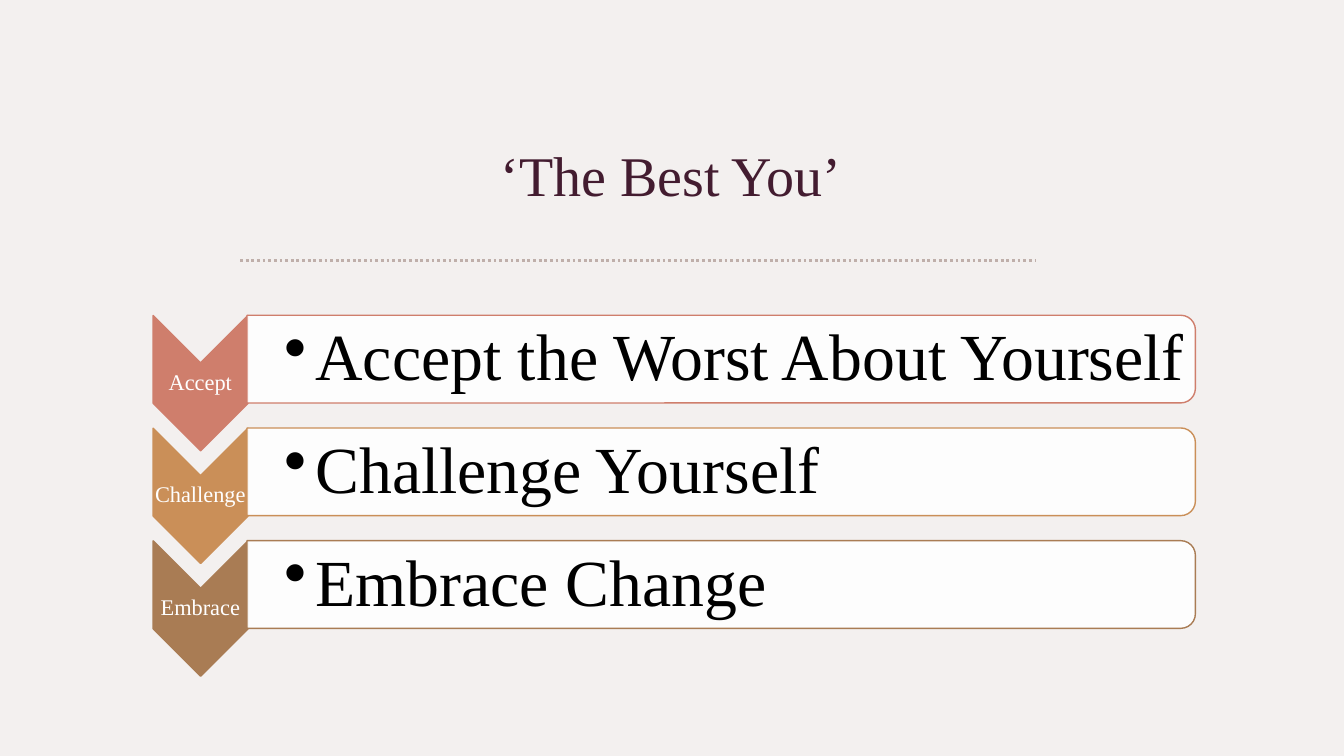
from pptx import Presentation
from pptx.dml.color import RGBColor
from pptx.enum.dml import MSO_LINE
from pptx.enum.shapes import MSO_CONNECTOR, MSO_SHAPE
from pptx.enum.text import MSO_ANCHOR, PP_ALIGN
from pptx.oxml.ns import qn
from pptx.util import Cm, Pt
from lxml.etree import SubElement


def color(hex_string):
    return RGBColor.from_string(hex_string)


def add_text(text, left, top, width, height, size, hex_color,
             align=PP_ALIGN.CENTER, spacing=0.9, inset=0.03, left_inset=0.03, bullet=False):
    box = slide.shapes.add_textbox(Cm(left), Cm(top), Cm(width), Cm(height))
    frame = box.text_frame
    frame.word_wrap = True
    frame.vertical_anchor = MSO_ANCHOR.MIDDLE
    frame.margin_left = Cm(left_inset)
    frame.margin_top = frame.margin_right = frame.margin_bottom = Cm(inset)
    paragraph = frame.paragraphs[0]
    paragraph.alignment = align
    paragraph.line_spacing = spacing
    if bullet:
        properties = paragraph._p.get_or_add_pPr()
        properties.set("marL", str(Cm(0.79)))
        properties.set("indent", str(Cm(-0.79)))
        SubElement(properties, qn("a:buChar"), char="•")
    run = paragraph.add_run()
    run.text = text
    run.font.name = "Times New Roman"
    run.font.size = Pt(size)
    run.font.color.rgb = color(hex_color)


presentation = Presentation()
presentation.slide_width = Cm(33.87)
presentation.slide_height = Cm(19.05)
slide = presentation.slides.add_slide(presentation.slide_layouts[6])
slide.background.fill.solid()
slide.background.fill.fore_color.rgb = color("F3F0EF")

add_text("‘The Best You’", 2.67, 2.62, 28.58, 3.56, 40, "431C30", spacing=1.0, inset=0.13)

divider = slide.shapes.add_connector(MSO_CONNECTOR.STRAIGHT, Cm(6.05), Cm(6.56), Cm(26.09), Cm(6.56))
divider.line.color.rgb = color("BFAFAA")
divider.line.width = Pt(2)
divider.line.dash_style = MSO_LINE.ROUND_DOT
SubElement(divider._element.spPr, qn("a:effectLst"))

steps = [
    ("Accept", "Accept the Worst About Yourself", "CF7E6C"),
    ("Challenge", "Challenge Yourself", "CA8F58"),
    ("Embrace", "Embrace Change", "A97C54"),
]
step_pitch = 2.84

for index, (label, statement, accent) in enumerate(steps):
    offset = index * step_pitch
    chevron = slide.shapes.add_shape(MSO_SHAPE.CHEVRON, Cm(3.35), Cm(8.46 + offset), Cm(3.41), Cm(2.39))
    bar = slide.shapes.add_shape(MSO_SHAPE.ROUND_2_SAME_RECTANGLE,
                                 Cm(17.07), Cm(-2.9 + offset), Cm(2.21), Cm(23.9))
    for shape, fill in ((chevron, accent), (bar, "FFFFFF")):
        shape.rotation = 90
        shape.shadow.inherit = False
        shape.fill.solid()
        shape.fill.fore_color.rgb = color(fill)
        shape.line.color.rgb = color(accent)
        shape.line.width = Pt(1)
    bar_color = bar._element.spPr.find(qn("a:solidFill")).find(qn("a:srgbClr"))
    SubElement(bar_color, qn("a:alpha"), val="90000")

    add_text(label, 3.85, 9.14 + offset, 2.4, 1.02, 16, "FFFFFF")
    add_text(statement, 6.22, 8.07 + offset, 23.8, 1.98, 47, "000000",
             align=PP_ALIGN.LEFT, inset=0.08, left_inset=0.94, bullet=True)

presentation.save("out.pptx")
